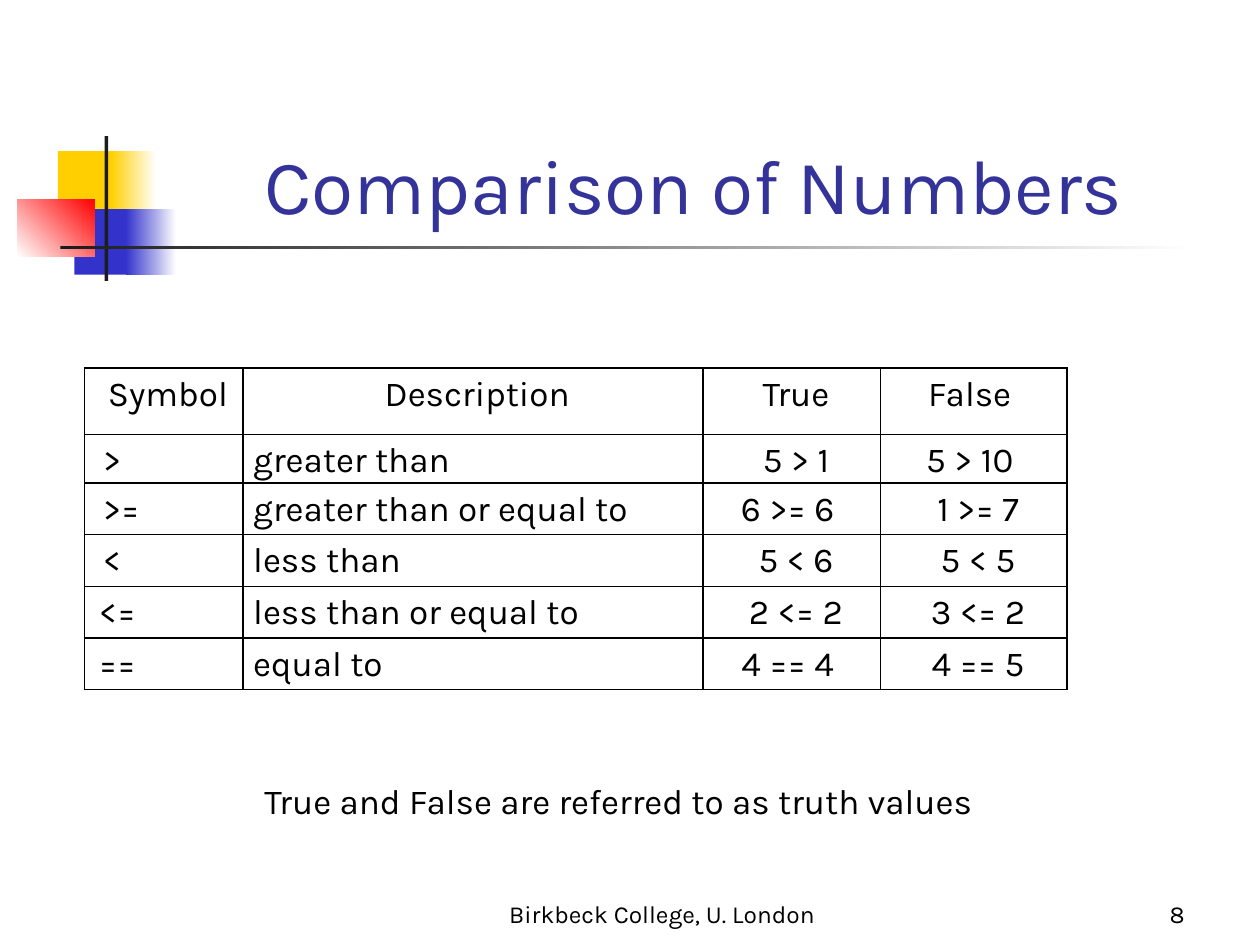
import pptx
import pptx.dml.color
import pptx.enum.shapes
import pptx.enum.text
import pptx.oxml
import pptx.oxml.ns
import pptx.util

PX = 9144
FONT = "Karla"
COLORS = {
    "yellow": "FFCF01",
    "blue": "3333CC",
    "red": "FF0000",
    "dark": "1C1C1C",
    "white": "FFFFFF",
    "title": "333399",
    "text": "000000",
}
ALIGN = pptx.enum.text.PP_ALIGN
ANCHOR = pptx.enum.text.MSO_ANCHOR

COLUMNS = [126, 365, 141, 148]
ROWS = [53, 38, 41, 41, 41, 41]
CELLS = [
    [" Symbol", " Description", " True", "False "],
    [" >", "greater than ", " 5 > 1", "5 > 10 "],
    [" >=", "greater than or equal to", "6 >= 6 ", " 1 >= 7"],
    [" <", "less than ", " 5 < 6", " 5 < 5"],
    ["<=", "less than or equal to", " 2 <= 2", " 3 <= 2"],
    ["==", "equal to", "4 == 4 ", " 4 == 5"],
]


def emu(*lengths):
    return [pptx.util.Emu(n * PX) for n in lengths]


def rgb(name):
    return pptx.dml.color.RGBColor.from_string(COLORS[name])


def add_run(p, text, size, color="text", font=FONT):
    r = p.add_run()
    r.text = text
    r.font.size = pptx.util.Pt(size)
    r.font.name = font
    r.font.color.rgb = rgb(color)


def write(tf, text, size=20, color="text", align=ALIGN.LEFT, spacing=None, lead=""):
    p = tf.paragraphs[0]
    p.alignment = align
    if spacing:
        p.line_spacing = spacing
    if lead:
        add_run(p, lead, 11, font="Calibri")
    add_run(p, text, size, color)


def add_text(s, box, text, anchor=ANCHOR.TOP, wrap=True, **fmt):
    tf = s.shapes.add_textbox(*emu(*box)).text_frame
    tf.word_wrap = wrap
    tf.vertical_anchor = anchor
    if not wrap:
        tf.auto_size = pptx.enum.text.MSO_AUTO_SIZE.SHAPE_TO_FIT_TEXT
    write(tf, text, **fmt)


def add_block(s, box, start, end=None, angle=0):
    sp = s.shapes.add_shape(pptx.enum.shapes.MSO_SHAPE.RECTANGLE, *emu(*box))
    sp.shadow.inherit = False
    sp.line.fill.background()
    if end is None:
        sp.fill.solid()
        sp.fill.fore_color.rgb = rgb(start)
        return
    sp.fill.gradient()
    sp.fill.gradient_angle = angle
    for stop, position, name in zip(sp.fill.gradient_stops, (0, 1), (start, end)):
        stop.position = position
        stop.color.rgb = rgb(name)


def build_emblem(s, x, y):
    blocks = [
        ((32, 12, 48, 52), "yellow", None, 0),
        ((74, 12, 36, 52), "yellow", "white", 0),
        ((45, 58, 46, 52), "blue", None, 0),
        ((86, 58, 40, 52), "blue", "white", 0),
        ((0, 50, 61, 46), "white", "red", 45),
        ((69, 0, 3, 115), "dark", None, 0),
        ((34, 87, 900, 3), "dark", "white", 0),
    ]
    for (left, top, width, height), start, end, angle in blocks:
        add_block(s, (x + left, y + top, width, height), start, end, angle)


def set_borders(cell):
    tc_pr = cell._tc.get_or_add_tcPr()
    for i, side in enumerate(("lnL", "lnR", "lnT", "lnB")):
        tc_pr.insert(i, pptx.oxml.parse_xml(
            f'<a:{side} {pptx.oxml.ns.nsdecls("a")} w="12700"><a:solidFill>'
            f'<a:srgbClr val="{COLORS["text"]}"/></a:solidFill></a:{side}>'))


def build_table(s, x, y):
    box = emu(x, y, sum(COLUMNS), sum(ROWS))
    table = s.shapes.add_table(len(ROWS), len(COLUMNS), *box).table
    table.first_row = table.horz_banding = False
    for column, width in zip(table.columns, emu(*COLUMNS)):
        column.width = width
    for row, height in zip(table.rows, emu(*ROWS)):
        row.height = height
    for i, texts in enumerate(CELLS):
        for j, text in enumerate(texts):
            cell = table.cell(i, j)
            cell.fill.background()
            cell.margin_left, cell.margin_right = emu(8, 8)
            cell.margin_top = cell.margin_bottom = 0
            set_borders(cell)
            centred = i == 0 or j > 1
            write(cell.text_frame, text, spacing=1.15,
                  align=ALIGN.CENTER if centred else ALIGN.LEFT,
                  lead=" " if text in ("<=", "==") else "")


def build_footer(s, x, y):
    fmt = dict(anchor=ANCHOR.BOTTOM, size=14)
    add_text(s, (x, y, 317, 50), "Birkbeck College, U. London", align=ALIGN.CENTER, **fmt)
    add_text(s, (x + 375, y, 208, 50), "8", align=ALIGN.RIGHT, **fmt)


def main():
    prs = pptx.Presentation()
    prs.slide_width, prs.slide_height = emu(1000, 750)
    s = prs.slides.add_slide(prs.slide_layouts[6])
    build_emblem(s, 14, 108)
    add_text(s, (125, 62, 852, 125), "Comparison of Numbers", anchor=ANCHOR.BOTTOM,
             size=44, color="title", align=ALIGN.CENTER)
    build_footer(s, 367, 692)
    build_table(s, 67, 292)
    add_text(s, (200, 614, 588, 44), "True and False are referred to as truth values",
             wrap=False)
    prs.save("out.pptx")


if __name__ == "__main__":
    main()
